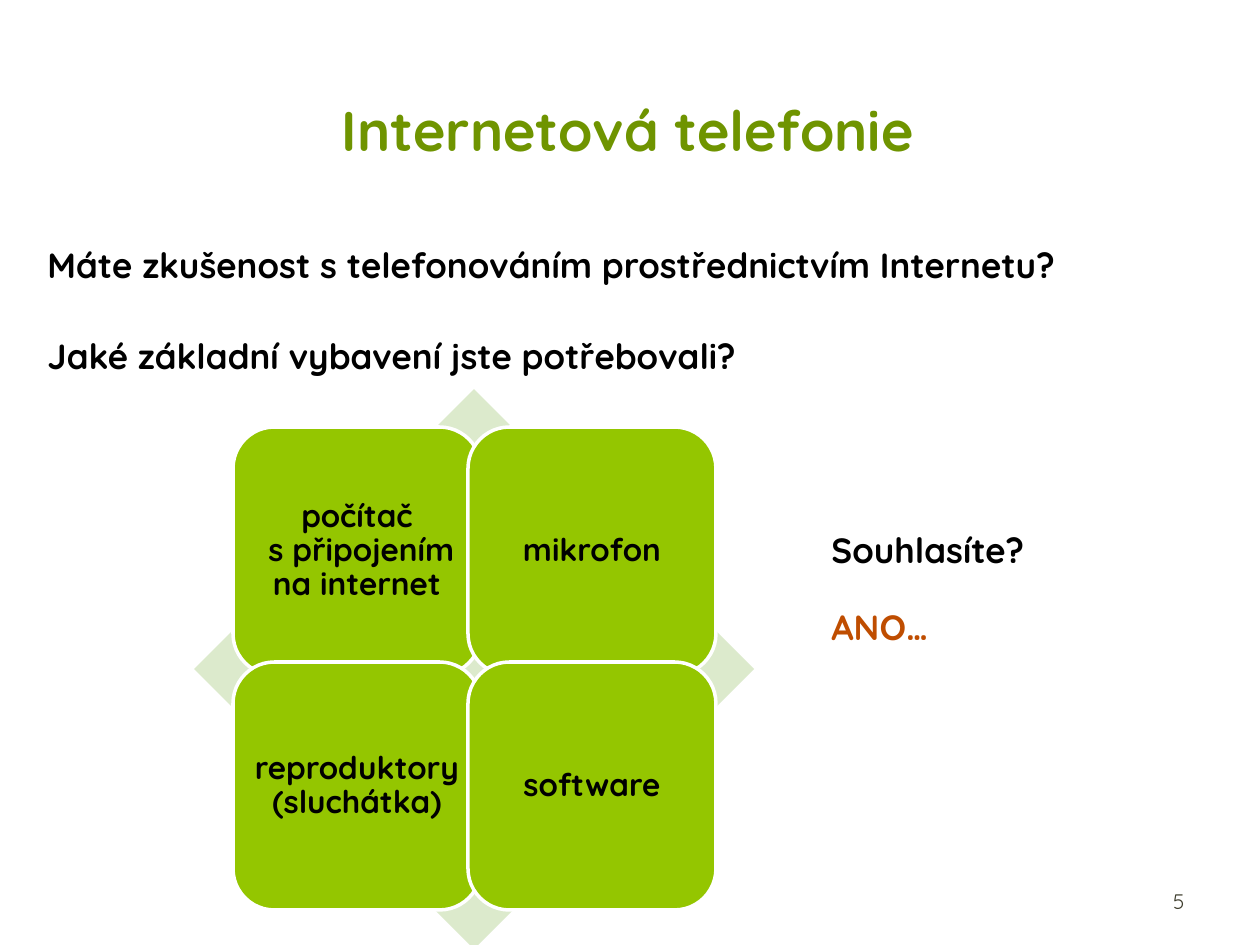
from dataclasses import dataclass

from pptx import Presentation
from pptx import util as u
from pptx.dml.color import RGBColor
from pptx.enum import shapes, text

PX = 914400 // 126  # EMU in one px


@dataclass(frozen=True)
class Theme:
    font: str = "Quicksand"
    heading: str = "6F9400"
    body: str = "000000"
    answer: str = "BF4D00"
    number: str = "3E3D2D"
    tile: str = "94C600"
    backdrop: str = "DCEACC"
    edge: str = "FFFFFF"
    heading_pt: int = 32
    body_pt: int = 20
    tile_pt: int = 18
    number_pt: int = 12


theme = Theme()


def write(frame, lines, size, color, bold=True, align=text.PP_ALIGN.LEFT,
          anchor=text.MSO_ANCHOR.TOP, **spacing):
    """Fill a text frame with one paragraph per line."""
    frame.text = "\n".join(lines)
    for key, value in {"word_wrap": True, "auto_size": text.MSO_AUTO_SIZE.NONE,
                       "vertical_anchor": anchor}.items():
        setattr(frame, key, value)
    for paragraph in frame.paragraphs:
        for key, value in {"alignment": align, **spacing}.items():
            setattr(paragraph, key, value)
        for run in paragraph.runs:
            for key, value in {"name": theme.font, "size": u.Pt(size), "bold": bold}.items():
                setattr(run.font, key, value)
            run.font.color.rgb = RGBColor.from_string(color)


def add_block(kind, box, fill):
    """Add a flat filled shape; box is left, top, width, height in px."""
    block = slide.shapes.add_shape(kind, *(v * PX for v in box))
    block.shadow.inherit = False
    block.fill.solid()
    block.fill.fore_color.rgb = RGBColor.from_string(fill)
    block.line.fill.background()
    return block


prs = Presentation()
prs.slide_width, prs.slide_height = u.Inches(10), u.Inches(7.5)
slide = prs.slides.add_slide(prs.slide_layouts[5])

# Title
heading = slide.shapes.title
for side, value in {"left": 59, "top": 57, "width": 1138, "height": 144}.items():
    setattr(heading, side, value * PX)
write(heading.text_frame, ["Internetová telefonie"], theme.heading_pt, theme.heading,
      align=text.PP_ALIGN.CENTER, anchor=text.MSO_ANCHOR.MIDDLE)

# Diamond behind the equipment tiles
add_block(shapes.MSO_SHAPE.DIAMOND, (194, 389, 560, 560), theme.backdrop)

# Equipment tiles, two by two
equipment = ["počítač\v s připojením na internet", "mikrofon",
             "reproduktory\v(sluchátka)", "software"]
TILE, PITCH, INSET = 248, 235, 9
for i, item in enumerate(equipment):
    row, col = divmod(i, 2)
    tile = add_block(shapes.MSO_SHAPE.ROUNDED_RECTANGLE,
                     (233 + col * PITCH, 427 + row * PITCH, TILE, TILE), theme.tile)
    tile.line.color.rgb = RGBColor.from_string(theme.edge)
    tile.line.width = u.Pt(2)
    for side in ("left", "top", "right", "bottom"):
        setattr(tile.text_frame, f"margin_{side}", INSET * PX)
    write(tile.text_frame, [item], theme.tile_pt, theme.body, align=text.PP_ALIGN.CENTER,
          anchor=text.MSO_ANCHOR.MIDDLE, line_spacing=0.9)

# Questions, answer and page number
questions = ["Máte zkušenost s telefonováním prostřednictvím Internetu?",
             "Jaké základní vybavení jste potřebovali?"]
number_format = {"bold": False, "align": text.PP_ALIGN.RIGHT,
                 "anchor": text.MSO_ANCHOR.MIDDLE}
notes = [
    ((35, 237, 1191, 149), questions, theme.body_pt, theme.body, {"space_after": u.Pt(28)}),
    ((819, 522, 338, 55), ["Souhlasíte?"], theme.body_pt, theme.body, {}),
    ((819, 599, 338, 55), ["ANO…"], theme.body_pt, theme.answer, {}),
    ((903, 876, 294, 50), ["5"], theme.number_pt, theme.number, number_format),
]
for box, lines, size, color, extra in notes:
    note = slide.shapes.add_textbox(*(v * PX for v in box))
    write(note.text_frame, lines, size, color, **extra)

prs.save("out.pptx")
